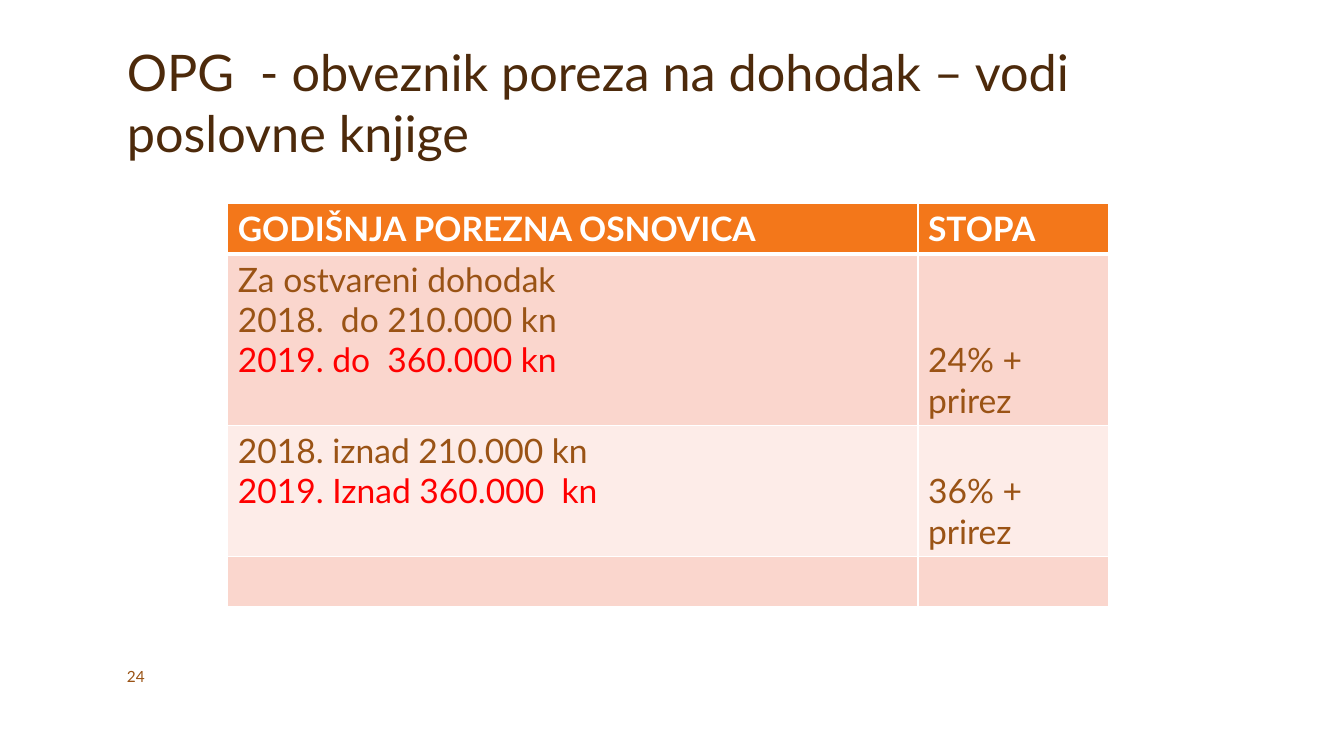
from lxml.etree import SubElement as Sub
from pptx import Presentation
from pptx.dml.color import RGBColor as Rgb
from pptx.enum.text import MSO_ANCHOR as Anchor
from pptx.oxml.ns import qn
from pptx.util import Pt

INK = {
    "title": "4D2A0B", "body": "9A5315", "new": "FF0000", "white": "FFFFFF",
    "head": "F3771A", "dark": "FAD6CD", "light": "FDECE8",
}


class Deck:
    face = "Lato"

    def __init__(self, wide, high):
        self.show = Presentation()
        self.show.slide_width, self.show.slide_height = Pt(wide), Pt(high)
        self.slide = self.show.slides.add_slide(self.show.slide_layouts[6])

    def fill_in(self, frame, lines, size, bold=False):
        for n, (words, ink) in enumerate(lines):
            para = frame.add_paragraph() if n else frame.paragraphs[0]
            para.text = words
            font = para.font
            font.name, font.size, font.bold = self.face, Pt(size), bold
            font.color.rgb = Rgb.from_string(INK[ink])

    def text(self, box, words, size, ink, anchor):
        frame = self.slide.shapes.add_textbox(*map(Pt, box)).text_frame
        frame.word_wrap = True
        frame.vertical_anchor = anchor
        self.fill_in(frame, [(words, ink)], size)

    def edge(self, cell, low):
        props = cell._tc.get_or_add_tcPr()
        for side, width in (("L", 1), ("R", 1), ("T", 1), ("B", low)):
            line = Sub(props, qn(f"a:ln{side}"), w=str(Pt(width)))
            fill = Sub(line, qn("a:solidFill"))
            Sub(fill, qn("a:srgbClr"), val=INK["white"])

    def table(self, left, top, widths, heights, rows, fills, size):
        box = map(Pt, (left, top, sum(widths), sum(heights)))
        grid = self.slide.shapes.add_table(len(rows), len(widths), *box).table
        grid.first_row = grid.horz_banding = False
        for col, width in zip(grid.columns, widths):
            col.width = Pt(width)
        for r, (row, high, fill) in enumerate(zip(rows, heights, fills)):
            grid.rows[r].height = Pt(high)
            for c, lines in enumerate(row):
                cell = grid.cell(r, c)
                self.edge(cell, 1 if r else 3)
                cell.fill.solid()
                cell.fill.fore_color.rgb = Rgb.from_string(INK[fill])
                cell.vertical_anchor = Anchor.BOTTOM if r and c else Anchor.TOP
                self.fill_in(cell.text_frame, lines, size, bold=not r)


def main():
    deck = Deck(960, 540)
    deck.text((83.5, 24, 792, 95.5),
              "OPG  - obveznik poreza na dohodak – vodi poslovne knjige",
              36, "title", Anchor.BOTTOM)
    deck.text((83.5, 474, 60, 18), "24", 11, "body", Anchor.MIDDLE)
    rows = [
        ([("GODIŠNJA POREZNA OSNOVICA", "white")], [("STOPA", "white")]),
        ([("Za ostvareni dohodak", "body"),
          ("2018.  do 210.000 kn", "body"),
          ("2019. do  360.000 kn", "new")],
         [("24% + prirez", "body")]),
        ([("2018. iznad 210.000 kn", "body"),
          ("2019. Iznad 360.000  kn", "new")],
         [("36% + prirez", "body")]),
        ([("", "body")], [("", "body")]),
    ]
    deck.table(162.7, 145.5, (493, 136), (36, 122.4, 93.6, 36), rows,
               ("head", "dark", "light", "dark"), 24)
    deck.show.save("out.pptx")


if __name__ == "__main__":
    main()
